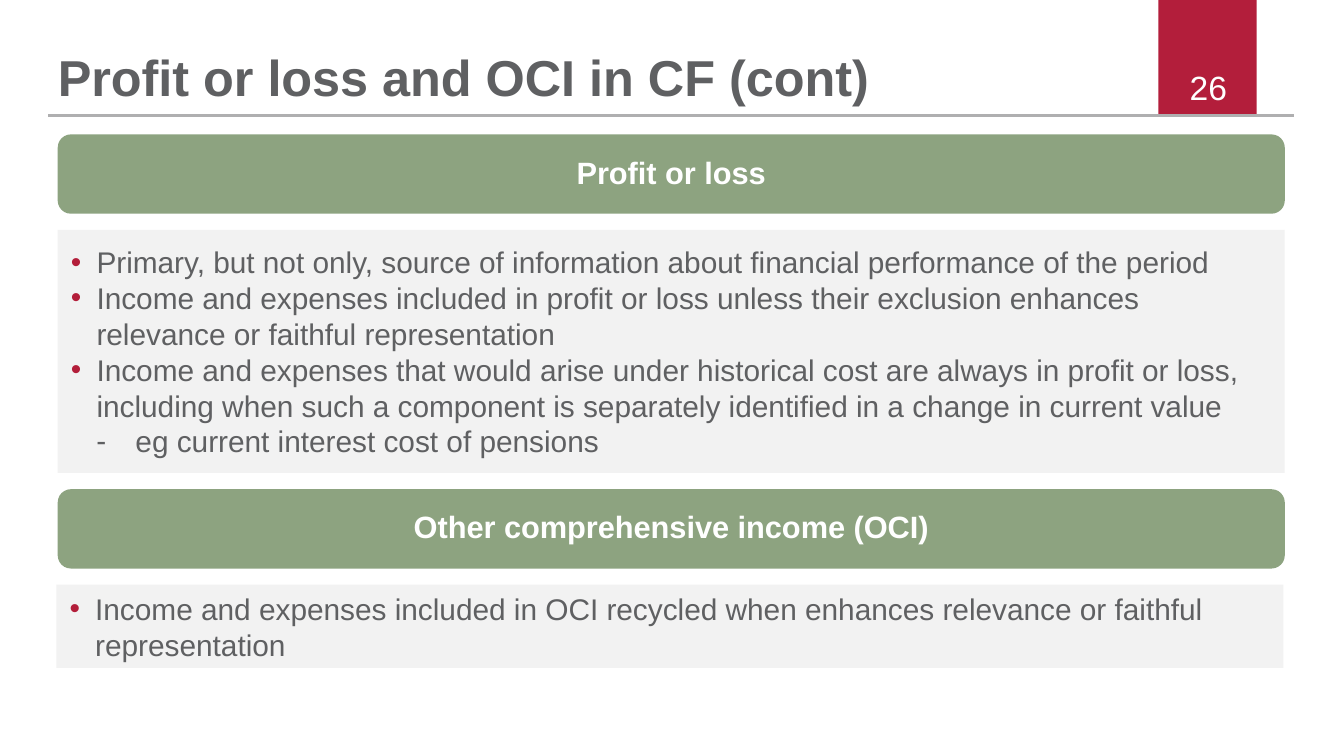
from lxml.etree import SubElement
from pptx import Presentation
from pptx.dml.color import RGBColor
from pptx.enum.shapes import MSO_CONNECTOR, MSO_SHAPE
from pptx.enum.text import MSO_ANCHOR, PP_ALIGN
from pptx.oxml.ns import qn
from pptx.util import Inches, Pt

COLORS = {
    "red": "B31E3B", "bullet": "B31E3A", "grey": "5F6062", "rule": "AFAFB0",
    "green": "8DA380", "panel": "F2F2F2", "white": "FFFFFF",
}
FONT = "Arial"
LEFT, WIDTH = 0.43, 9.13

# Per level: left margin, hanging indent, bullet character, bullet colour
LEVELS = {1: (0.19, 0.19, "•", "bullet"), 2: (0.48, 0.29, "-", "grey")}

PROFIT_POINTS = [
    (1, "Primary, but not only, source of information about financial "
        "performance of the period"),
    (1, "Income and expenses included in profit or loss unless their exclusion "
        "enhances relevance or faithful representation"),
    (1, "Income and expenses that would arise under historical cost are always "
        "in profit or loss, including when such a component is separately "
        "identified in a change in current value"),
    (2, "eg current interest cost of pensions"),
]
OCI_POINTS = [
    (1, "Income and expenses included in OCI recycled when enhances relevance "
        "or faithful representation"),
]


def rgb(name):
    return RGBColor.from_string(COLORS[name])


def add_block(s, shape, box, fill):
    sp = s.shapes.add_shape(shape, *map(Inches, box))
    sp.shadow.inherit = False
    sp.fill.solid()
    sp.fill.fore_color.rgb = rgb(fill)
    sp.line.fill.background()
    return sp


def set_frame(sp, anchor, x_inset, y_inset):
    tf = sp.text_frame
    tf.word_wrap = True
    tf.vertical_anchor = anchor
    tf.margin_left = tf.margin_right = Inches(x_inset)
    tf.margin_top = tf.margin_bottom = Inches(y_inset)
    return tf


def write(p, text, size, color, align=PP_ALIGN.LEFT, spacing=1.0, bold=False):
    p.alignment = align
    p.line_spacing = spacing
    r = p.add_run()
    r.text = text
    r.font.name = FONT
    r.font.size = Pt(size)
    r.font.bold = bold
    r.font.color.rgb = rgb(color)


def set_bullet(p, level):
    margin, hanging, char, color = LEVELS[level]
    p.level = level
    pPr = p._p.get_or_add_pPr()
    pPr.set("marL", str(Inches(margin)))
    pPr.set("indent", str(-Inches(hanging)))
    clr = SubElement(pPr, qn("a:buClr"))
    SubElement(clr, qn("a:srgbClr"), val=COLORS[color])
    SubElement(pPr, qn("a:buFont"), typeface=FONT)
    SubElement(pPr, qn("a:buChar"), char=char)


def add_header(s, title, number, left, top, width, height):
    # Page tab, with the rule along the foot of the header
    add_block(s, MSO_SHAPE.RECTANGLE, (left + 8.26, top, 0.73, height), "red")
    y = Inches(top + height)
    rule = s.shapes.add_connector(
        MSO_CONNECTOR.STRAIGHT, Inches(left), y, Inches(left + width), y)
    rule.line.color.rgb = rgb("rule")
    rule.line.width = Pt(1.2)
    SubElement(rule._element.spPr, qn("a:effectLst"))

    # Page number
    sp = s.shapes.add_textbox(
        *map(Inches, (left + 6.53, top + 0.5, 2.33, 0.3)))
    tf = set_frame(sp, MSO_ANCHOR.MIDDLE, 0.09, 0.04)
    write(tf.paragraphs[0], number, 18, "white", PP_ALIGN.RIGHT)

    # Title
    sp = s.shapes.add_textbox(*map(Inches, (left + 0.07, top, 7.95, 0.8)))
    tf = set_frame(sp, MSO_ANCHOR.BOTTOM, 0, 0)
    write(tf.paragraphs[0], title, 27, "grey", spacing=0.9, bold=True)


def add_heading(s, text, left, top, width, height):
    sp = add_block(s, MSO_SHAPE.ROUNDED_RECTANGLE,
                   (left, top, width, height), "green")
    tf = set_frame(sp, MSO_ANCHOR.MIDDLE, 0.06, 0.06)
    write(tf.paragraphs[0], text, 16.5, "white", PP_ALIGN.CENTER, 0.9, True)


def add_points(s, points, left, top, width, height):
    sp = add_block(s, MSO_SHAPE.RECTANGLE, (left, top, width, height), "panel")
    tf = set_frame(sp, MSO_ANCHOR.MIDDLE, 0.1, 0.05)
    for i, (level, text) in enumerate(points):
        p = tf.add_paragraph() if i else tf.paragraphs[0]
        set_bullet(p, level)
        write(p, text, 16, "grey")


def main():
    prs = Presentation()
    # Widescreen, 16:9
    prs.slide_width = Inches(10)
    prs.slide_height = prs.slide_width * 9 // 16
    s = prs.slides.add_slide(prs.slide_layouts[6])

    add_header(s, "Profit or loss and OCI in CF (cont)", "26",
               0.36, 0, 9.27, 0.86)
    add_heading(s, "Profit or loss", LEFT, 1, WIDTH, 0.59)
    add_points(s, PROFIT_POINTS, LEFT, 1.71, WIDTH, 1.81)
    add_heading(s, "Other comprehensive income (OCI)", LEFT, 3.64, WIDTH, 0.59)
    add_points(s, OCI_POINTS, LEFT - 0.01, 4.35, WIDTH, 0.62)

    prs.save("out.pptx")


if __name__ == "__main__":
    main()
